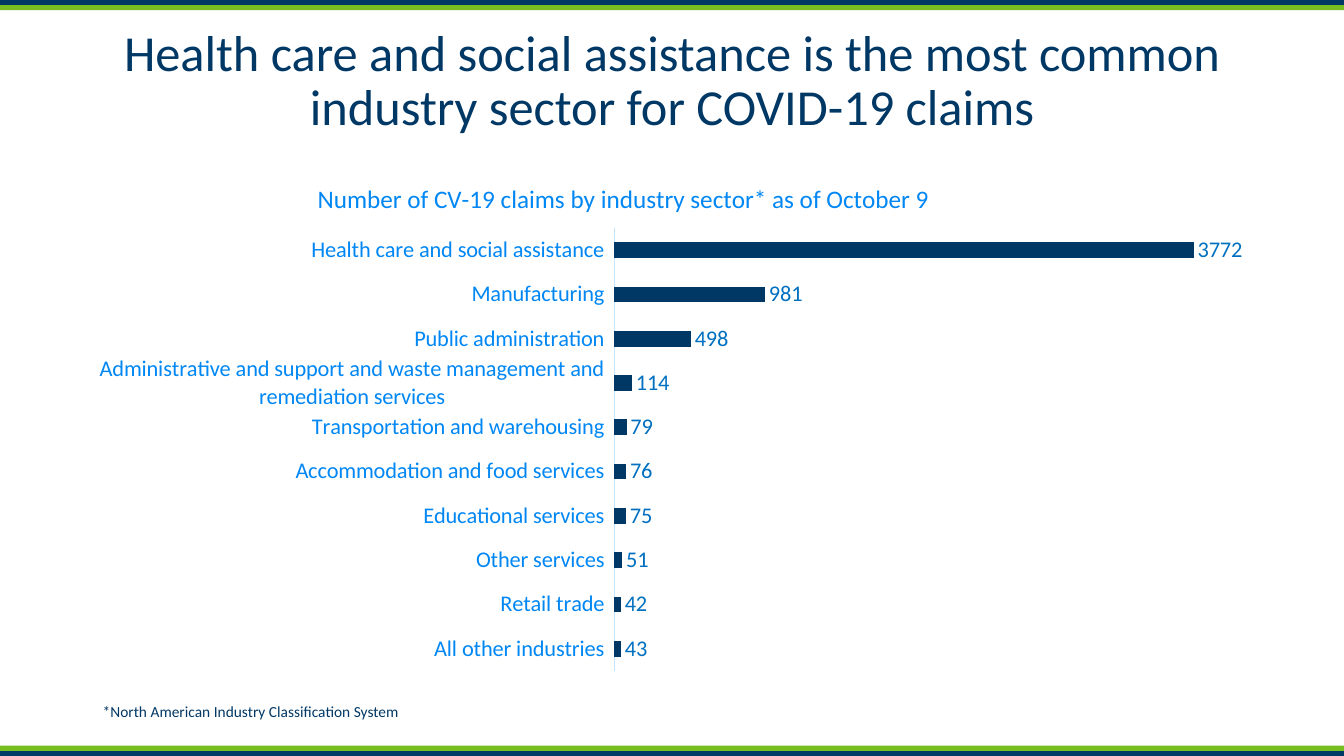
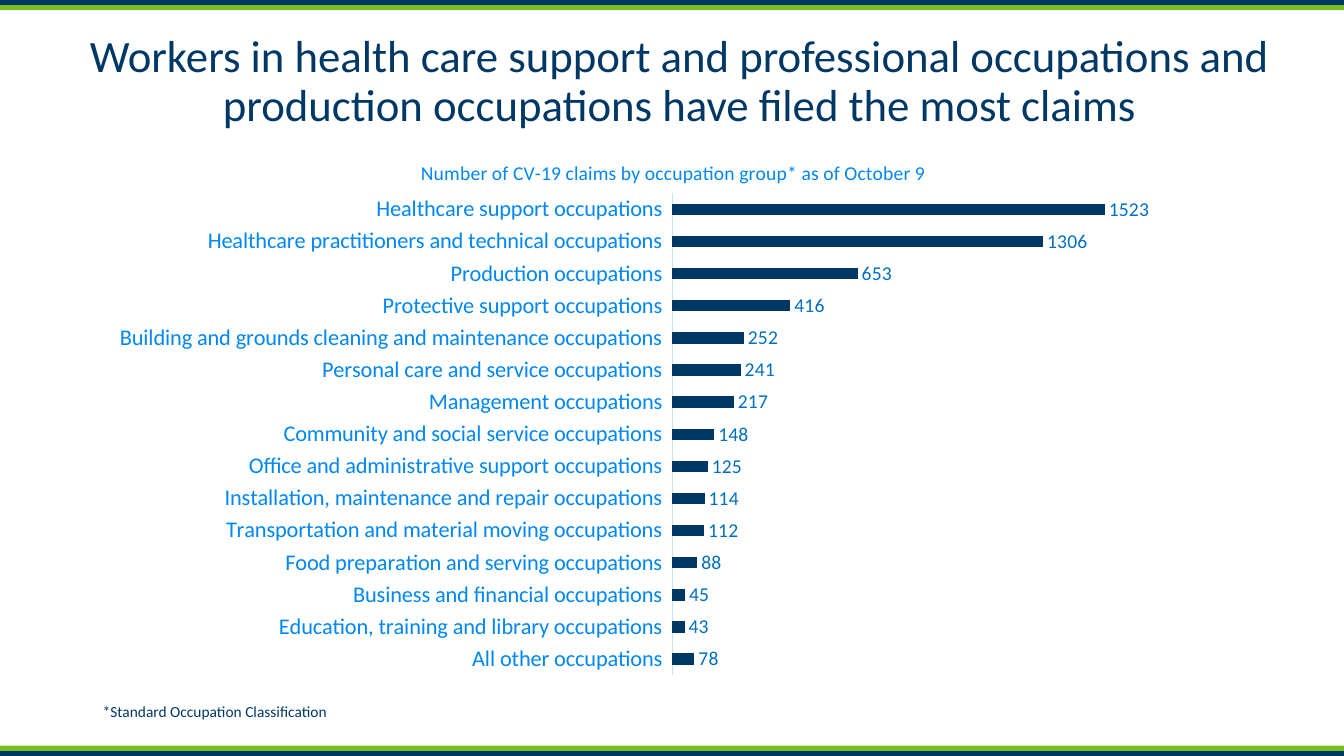
from dataclasses import dataclass

from lxml.etree import SubElement
from pptx import Presentation
from pptx.chart.data import CategoryChartData
from pptx.dml.color import RGBColor
from pptx.enum.chart import XL_CHART_TYPE, XL_LABEL_POSITION, XL_TICK_LABEL_POSITION, XL_TICK_MARK
from pptx.enum.shapes import MSO_SHAPE
from pptx.enum.text import MSO_ANCHOR, PP_ALIGN
from pptx.oxml.ns import qn
from pptx.util import Cm, Pt


@dataclass(frozen=True)
class Theme:
    """Colours, font and type sizes shared by the slides."""
    navy: str = "003865"
    green: str = "78BE21"
    blue: str = "0087F4"
    label: str = "0070C0"
    pale: str = "C2E4FF"
    font: str = "Calibri"
    note: int = 11
    group: int = 16
    gap: int = 182


THEME = Theme()
WIDTH, HEIGHT, BAND = 33.87, 19.05, 0.13
NOTE_BOX = (2.34, 17.58, 9.75, 0.74)

SECTORS = [
    ("Health care and social assistance", 3772),
    ("Manufacturing", 981),
    ("Public administration", 498),
    ("Administrative and support and waste management and remediation services", 114),
    ("Transportation and warehousing", 79),
    ("Accommodation and food services", 76),
    ("Educational services", 75),
    ("Other services", 51),
    ("Retail trade", 42),
    ("All other industries", 43),
]

JOBS = [
    ("Healthcare support occupations", 1523),
    ("Healthcare practitioners and technical occupations", 1306),
    ("Production occupations", 653),
    ("Protective support occupations", 416),
    ("Building and grounds cleaning and maintenance occupations", 252),
    ("Personal care and service occupations", 241),
    ("Management occupations", 217),
    ("Community and social service occupations", 148),
    ("Office and administrative support occupations", 125),
    ("Installation, maintenance and repair occupations", 114),
    ("Transportation and material moving occupations", 112),
    ("Food preparation and serving occupations", 88),
    ("Business and financial occupations", 45),
    ("Education, training and library occupations", 43),
    ("All other occupations", 78),
]

SLIDES = [
    dict(
        title="Health care and social assistance is the most common industry sector for COVID-19 claims",
        title_box=(2.34, 1.02, 29.21, 2.11), title_size=36,
        note="*North American Industry Classification System",
        chart_box=(2.34, 4.19, 29.21, 12.98),
        chart=dict(
            head="Number of CV-19 claims by industry sector* as of October 9",
            rows=SECTORS, top=4000, head_size=18, label_size=16,
            head_at=(0.19, 0.02), plot=(0.45, 0.12, 0.53, 0.86)),
    ),
    dict(
        title="Workers in health care support and professional occupations "
              "and production occupations have filed the most claims",
        title_box=(1.45, 1.02, 31.37, 2.11), title_size=32,
        note="*Standard Occupation Classification",
        chart_box=(2.34, 3.66, 29.21, 13.49),
        chart=dict(
            head="Number of CV-19 claims by occupation group* as of October 9",
            rows=JOBS, top=2000, head_size=14, label_size=14,
            head_at=(0.28, 0.02), plot=(0.5, 0.09, 0.49, 0.9)),
    ),
]


def style(font, size, color):
    """Apply the theme font with a size and colour."""
    font.name, font.size, font.bold = THEME.font, Pt(size), False
    font.color.rgb = RGBColor.from_string(color)


def write(slide, box, text, size, color=THEME.navy, align=PP_ALIGN.LEFT,
          anchor=MSO_ANCHOR.TOP, lead=1.0):
    """Place one paragraph of formatted text in a box."""
    frame = slide.shapes.add_textbox(*map(Cm, box)).text_frame
    frame.word_wrap, frame.vertical_anchor = True, anchor
    para = frame.paragraphs[0]
    para.alignment, para.line_spacing = align, lead
    run = para.add_run()
    run.text = text
    style(run.font, size, color)


def bands(slide, box):
    """Draw the paired stripes along the top and bottom of a box."""
    left, top, width, height = box
    for row, color in enumerate((THEME.navy, THEME.green)):
        for y in (top + row * BAND, top + height - (row + 1) * BAND):
            bar = slide.shapes.add_shape(
                MSO_SHAPE.RECTANGLE, *map(Cm, (left, y, width, BAND)))
            bar.shadow.inherit = False
            bar.fill.solid()
            bar.fill.fore_color.rgb = RGBColor.from_string(color)
            bar.line.fill.background()


def pin(part, index, place, inner=False):
    """Fix a chart part at fractions of the chart area."""
    old = part.find(qn("c:layout"))
    if old is not None:
        part.remove(old)
    layout = SubElement(part, qn("c:layout"))
    part.insert(index, layout)
    manual = SubElement(layout, qn("c:manualLayout"))
    if inner:
        SubElement(manual, qn("c:layoutTarget")).set("val", "inner")
    for key in ("xMode", "yMode"):
        SubElement(manual, qn("c:" + key)).set("val", "edge")
    for key, value in zip("xywh", place):
        SubElement(manual, qn("c:" + key)).set("val", str(value))


def bars(slide, box, head, rows, top, head_size, label_size, head_at, plot):
    """Add a bar chart whose rows read from top to bottom."""
    data = CategoryChartData()
    names, counts = zip(*reversed(rows))
    data.categories = names
    data.add_series("Series 1", counts)
    chart = slide.shapes.add_chart(
        XL_CHART_TYPE.BAR_CLUSTERED, *map(Cm, box), data).chart
    style(chart.font, label_size, THEME.navy)
    chart.has_legend = False

    chart.has_title = True
    run = chart.chart_title.text_frame.paragraphs[0].add_run()
    run.text = head
    style(run.font, head_size, THEME.blue)
    tree = chart.element
    pin(tree.find(".//" + qn("c:title")), 1, head_at)
    pin(tree.find(".//" + qn("c:plotArea")), 0, plot, inner=True)

    group = chart.category_axis
    group.major_tick_mark = group.minor_tick_mark = XL_TICK_MARK.NONE
    group.tick_label_position = XL_TICK_LABEL_POSITION.LOW
    group.has_major_gridlines = False
    style(group.tick_labels.font, THEME.group, THEME.blue)
    group.format.line.color.rgb = RGBColor.from_string(THEME.pale)
    group.format.line.width = Pt(0.75)

    count = chart.value_axis
    count.minimum_scale, count.maximum_scale = 0, top
    count.has_major_gridlines = False
    count.visible = False

    body = chart.plots[0]
    body.gap_width, body.vary_by_categories = THEME.gap, False
    fill = body.series[0].format.fill
    fill.solid()
    fill.fore_color.rgb = RGBColor.from_string(THEME.navy)
    body.has_data_labels = True
    labels = body.data_labels
    labels.show_value = True
    labels.position = XL_LABEL_POSITION.OUTSIDE_END
    style(labels.font, label_size, THEME.label)


def page(deck, title, title_box, title_size, note, chart_box, chart):
    """Build one slide with stripes, title, chart and footnote."""
    slide = deck.slides.add_slide(deck.slide_layouts[6])
    bands(slide, (0, 0, WIDTH, HEIGHT))
    write(slide, title_box, title, title_size, align=PP_ALIGN.CENTER,
          anchor=MSO_ANCHOR.MIDDLE, lead=0.9)
    write(slide, NOTE_BOX, note, THEME.note)
    bars(slide, chart_box, **chart)


def main():
    """Build the deck and save it."""
    deck = Presentation()
    deck.slide_width, deck.slide_height = Cm(WIDTH), Cm(HEIGHT)
    for item in SLIDES:
        page(deck, **item)
    deck.save("out.pptx")


if __name__ == "__main__":
    main()
